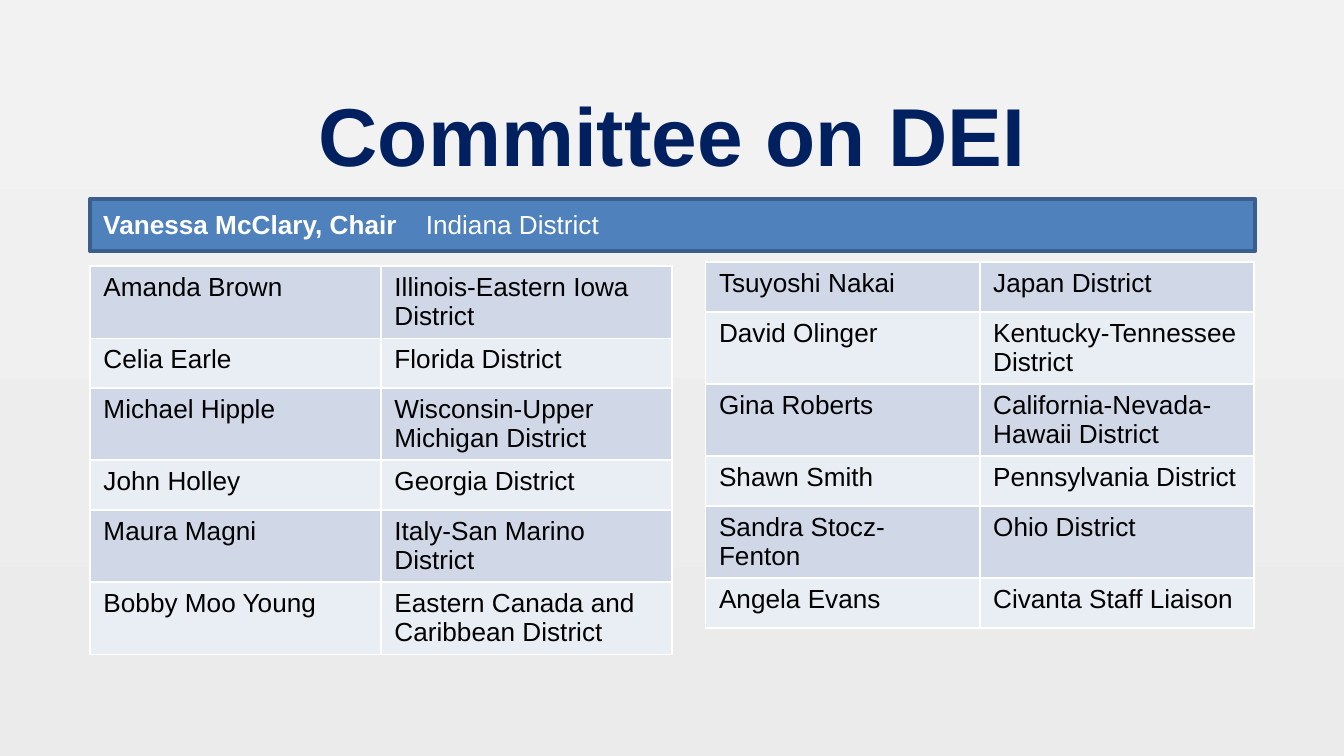
from lxml import etree
from pptx import Presentation
from pptx.dml.color import RGBColor
from pptx.enum.shapes import MSO_SHAPE
from pptx.enum.text import MSO_ANCHOR, MSO_AUTO_SIZE, PP_ALIGN
from pptx.oxml.ns import qn
from pptx.util import Inches, Pt

RECT = MSO_SHAPE.RECTANGLE
MIDDLE = MSO_ANCHOR.MIDDLE
FIXED = MSO_AUTO_SIZE.NONE
CENTER = PP_ALIGN.CENTER

NAVY = RGBColor(0x00, 0x20, 0x60)
BLUE = RGBColor(0x4F, 0x81, 0xBD)
EDGE = RGBColor(0x3A, 0x5F, 0x8C)
WHITE = RGBColor(0xFF, 0xFF, 0xFF)
BLACK = RGBColor(0x00, 0x00, 0x00)
BANDS = (RGBColor(0xD0, 0xD8, 0xE8), RGBColor(0xE9, 0xED, 0xF4))
SHADES = (RGBColor(0xF2, 0xF2, 0xF2), RGBColor(0xEB, 0xEB, 0xEB))

TITLE = {"name": "Arial", "size": Pt(44), "bold": True}
PLAIN = {"name": "Arial", "size": Pt(14), "bold": False}
STRONG = {**PLAIN, "bold": True}
WIDTH = Inches(10)
HEIGHT = WIDTH * 9 // 16
LEFT, WIDE = 0.67, 8.67
ROW = 0.37

FIRST = [
    ("Amanda Brown", "Illinois-Eastern Iowa District"),
    ("Celia Earle", "Florida District"),
    ("Michael Hipple", "Wisconsin-Upper Michigan District"),
    ("John Holley", "Georgia District"),
    ("Maura Magni", "Italy-San Marino District"),
    ("Bobby Moo Young", "Eastern Canada and Caribbean District"),
]
SECOND = [
    ("Tsuyoshi Nakai", "Japan District"),
    ("David Olinger", "Kentucky-Tennessee District"),
    ("Gina Roberts", "California-Nevada-Hawaii District"),
    ("Shawn Smith", "Pennsylvania District"),
    ("Sandra Stocz-Fenton", "Ohio District"),
    ("Angela Evans", "Civanta Staff Liaison"),
]


def apply(item, values):
    for name, value in values.items():
        setattr(item, name, value)


def place(left, top, width, height):
    return [Inches(n) for n in (left, top, width, height)]


def write(para, text, style, color):
    run = para.add_run()
    run.text = text
    apply(run.font, style)
    run.font.color.rgb = color


def shade(slide):
    fill = slide.background.fill
    fill.gradient()
    fill.gradient_angle = 270
    for stop, color in zip(fill.gradient_stops, SHADES):
        stop.color.rgb = color


def head(slide, text):
    title = slide.shapes.title
    box = place(LEFT, 0.65, WIDE, 0.69)
    apply(title, dict(zip(("left", "top", "width", "height"), box)))
    frame = title.text_frame
    sides = ("left", "top", "right", "bottom")
    apply(frame, {f"margin_{side}": Inches(0.1) for side in sides})
    apply(frame, {"vertical_anchor": MIDDLE, "auto_size": FIXED, "word_wrap": True})
    para = frame.paragraphs[0]
    para.alignment = CENTER
    write(para, text, TITLE, NAVY)


def edge(cell):
    props = cell._tc.get_or_add_tcPr()
    for spot, side in enumerate(("lnL", "lnR", "lnT", "lnB")):
        line = etree.Element(qn(f"a:{side}"), w=str(Pt(1)))
        fill = etree.SubElement(line, qn("a:solidFill"))
        etree.SubElement(fill, qn("a:srgbClr"), val=str(WHITE))
        props.insert(spot, line)


def roster(slide, people, left, top, width):
    box = place(left, top, width, ROW * len(people))
    table = slide.shapes.add_table(len(people), 2, *box).table
    table.first_row = False
    for column in table.columns:
        column.width = Inches(width / 2)
    for row, person in enumerate(people):
        for col, text in enumerate(person):
            cell = table.cell(row, col)
            cell.fill.solid()
            cell.fill.fore_color.rgb = BANDS[row % 2]
            edge(cell)
            write(cell.text_frame.paragraphs[0], text, PLAIN, BLACK)


def bar(slide):
    shape = slide.shapes.add_shape(RECT, *place(LEFT, 1.48, WIDE, 0.39))
    shape.shadow.inherit = False
    shape.fill.solid()
    shape.fill.fore_color.rgb = BLUE
    shape.line.color.rgb = EDGE
    shape.line.width = Pt(2)


def chair(slide, name, area):
    box = slide.shapes.add_textbox(*place(LEFT, 1.5, 8.5, 0.34))
    box.text_frame.word_wrap = True
    para = box.text_frame.paragraphs[0]
    tabs = etree.SubElement(para._p.get_or_add_pPr(), qn("a:tabLst"))
    etree.SubElement(tabs, qn("a:tab"), pos=str(Inches(2.4)), algn="l")
    write(para, f"{name}\t", STRONG, WHITE)
    write(para, area, PLAIN, WHITE)


def main():
    deck = Presentation()
    apply(deck, {"slide_width": WIDTH, "slide_height": HEIGHT})
    slide = deck.slides.add_slide(deck.slide_layouts[5])
    shade(slide)
    head(slide, "Committee on DEI")
    roster(slide, FIRST, LEFT, 1.98, 4.33)
    roster(slide, SECOND, 5.25, 1.95, 4.08)
    bar(slide)
    chair(slide, "Vanessa McClary, Chair", "Indiana District")
    deck.save("out.pptx")


if __name__ == "__main__":
    main()
